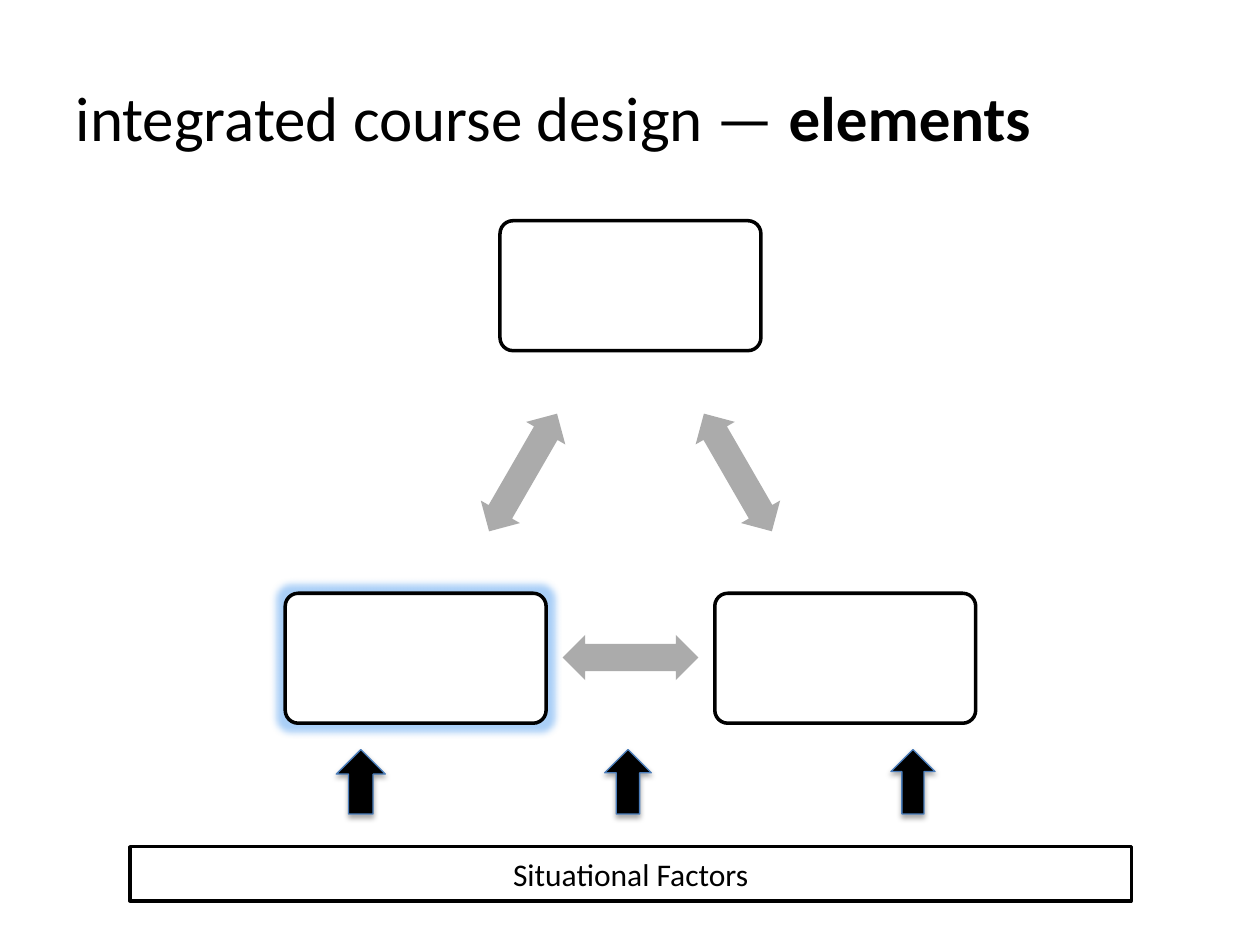
"""Build the slide on the elements of integrated course design."""
from dataclasses import dataclass
from typing import Optional

from lxml.etree import SubElement
from pptx import Presentation
from pptx.dml.color import RGBColor
from pptx.enum.shapes import MSO_SHAPE as Kind
from pptx.enum.text import MSO_ANCHOR as Anchor, PP_ALIGN as Align
from pptx.oxml.ns import qn
from pptx.util import Cm, Pt

BLACK = RGBColor(0x00, 0x00, 0x00)
WHITE = RGBColor(0xFF, 0xFF, 0xFF)
GRAY = RGBColor(0xAB, 0xAB, 0xAB)
BLUE = RGBColor(0x4B, 0x7E, 0xBC)
GLOW = RGBColor(0x54, 0x9F, 0xF0)

MID = 12.71
SIDE = 4.33
BOX_W, BOX_H = 5.26, 2.62
LINK_W, LINK_H = 2.74, 0.91
LOW = 11.96


@dataclass
class Item:
    kind: Kind
    left: float
    top: float
    width: float
    height: float
    fill: RGBColor
    line: Optional[RGBColor] = None
    weight: float = 2
    turn: float = 0
    adjust: tuple[float, ...] = ()


def box(mid: float, top: float) -> Item:
    return Item(Kind.ROUNDED_RECTANGLE, mid - BOX_W / 2, top, BOX_W, BOX_H,
                WHITE, BLACK, adjust=(0.1,))


def link(mid: float, top: float, turn: float) -> Item:
    return Item(Kind.LEFT_RIGHT_ARROW, mid - LINK_W / 2, top, LINK_W, LINK_H,
                GRAY, turn=turn, adjust=(0.6, 0.5))


def draw(slide, item: Item):
    shape = slide.shapes.add_shape(item.kind, Cm(item.left), Cm(item.top),
                                   Cm(item.width), Cm(item.height))
    shape.shadow.inherit = False
    shape.rotation = item.turn
    for i, value in enumerate(item.adjust):
        shape.adjustments[i] = value
    shape.fill.solid()
    shape.fill.fore_color.rgb = item.fill
    if item.line is None:
        shape.line.fill.background()
    else:
        shape.line.color.rgb = item.line
        shape.line.width = Pt(item.weight)
    return shape


def effect(shape, tag: str, color: RGBColor, alpha: int, **attrs: str) -> None:
    group = shape.element.spPr.find(qn("a:effectLst"))
    node = SubElement(group, qn(tag), attrs)
    tint = SubElement(node, qn("a:srgbClr"), val=str(color))
    SubElement(tint, qn("a:alpha"), val=str(alpha * 1000))


def write(shape, text: str, size: float = 18, bold: bool = False,
          align: Align = Align.CENTER) -> None:
    frame = shape.text_frame
    frame.word_wrap = True
    frame.vertical_anchor = Anchor.MIDDLE
    para = frame.paragraphs[0]
    para.alignment = align
    run = para.add_run()
    run.text = text
    run.font.name = "Calibri"
    run.font.size = Pt(size)
    run.font.bold = bold
    run.font.color.rgb = BLACK


def main() -> None:
    deck = Presentation()
    deck.slide_width, deck.slide_height = Cm(25.4), Cm(19.05)
    slide = deck.slides.add_slide(deck.slide_layouts[5])

    title = slide.shapes.title
    title.left, title.top = Cm(1.27), Cm(0.76)
    title.width, title.height = Cm(22.86), Cm(3.18)
    write(title, "integrated course design — ", size=36, align=Align.LEFT)
    write(title, "elements", size=36, bold=True, align=Align.LEFT)

    draw(slide, box(MID, 4.45))
    draw(slide, link(MID + SIDE / 2, 9.07, 60))
    draw(slide, box(MID + SIDE, LOW))
    draw(slide, link(MID, 12.8, 180))
    focus = draw(slide, box(MID - SIDE, LOW))
    effect(focus, "a:glow", GLOW, 50, rad=str(Pt(8)))
    draw(slide, link(MID - SIDE / 2, 9.07, 300))

    bar = draw(slide, Item(Kind.RECTANGLE, 2.62, 17.07, 20.19, 1.09,
                           WHITE, BLACK))
    write(bar, "Situational Factors")

    for left, width in ((6.78, 0.99), (17.96, 0.89), (12.19, 0.94)):
        arrow = draw(slide, Item(Kind.UP_ARROW, left, 15.11, width, 1.3,
                                 BLACK, BLUE, weight=0.75))
        effect(arrow, "a:outerShdw", BLACK, 35, blurRad=str(Pt(3.1)),
               dist=str(Pt(1.8)), dir="5400000", rotWithShape="0")

    deck.save("out.pptx")


if __name__ == "__main__":
    main()
